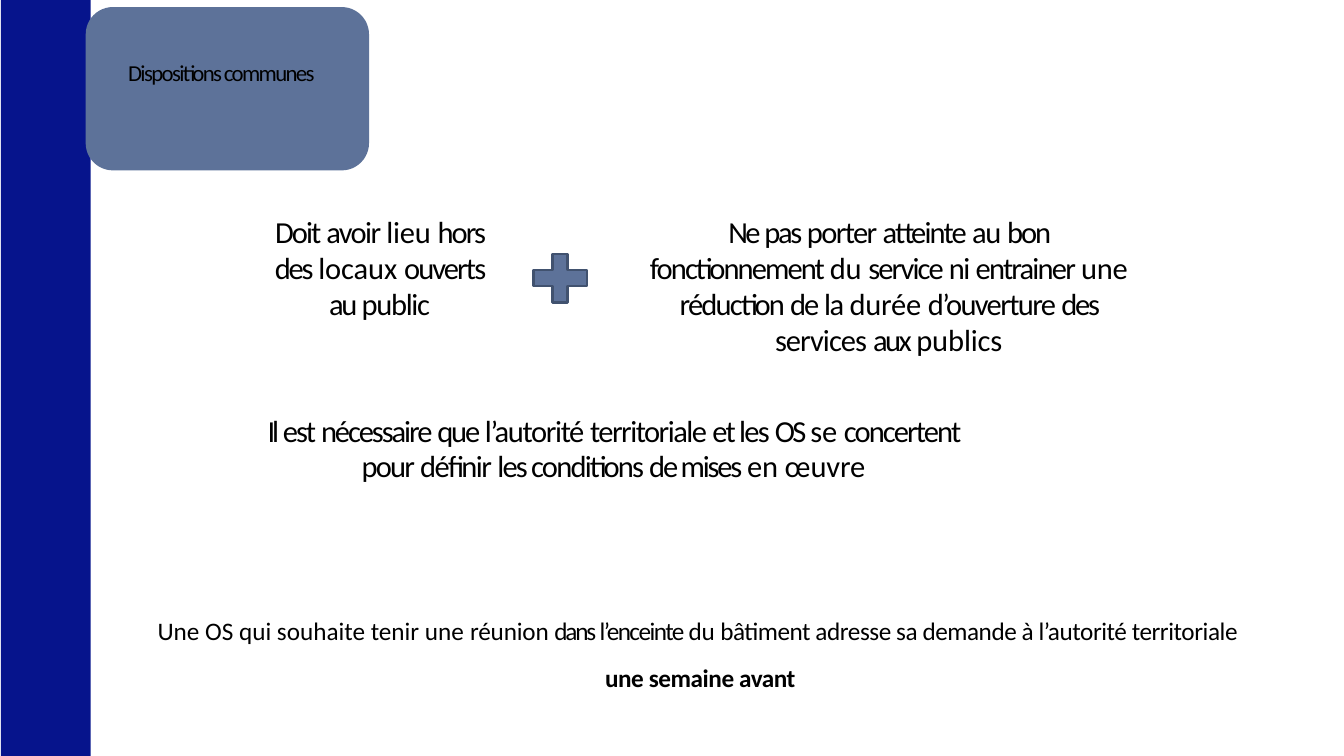
"""Slide « Dispositions communes »: rules for holding union meetings."""
from pptx import Presentation
from pptx.dml.color import RGBColor
from pptx.enum.shapes import MSO_SHAPE
from pptx.enum.text import PP_ALIGN
from pptx.util import Inches, Pt

NAVY = RGBColor(0x06, 0x14, 0x8C)
SLATE = RGBColor(0x5D, 0x72, 0x99)
DARK_SLATE = RGBColor(0x41, 0x52, 0x6F)
BLACK = RGBColor(0, 0, 0)

prs = Presentation()
prs.slide_width, prs.slide_height = Inches(13.33), Inches(7.5)
slide = prs.slides.add_slide(prs.slide_layouts[6])


def add_panel(preset, left, top, width, height, color):
    panel = slide.shapes.add_shape(
        preset, Inches(left), Inches(top), Inches(width), Inches(height))
    panel.shadow.inherit = False
    panel.fill.solid()
    panel.fill.fore_color.rgb = color
    panel.line.fill.background()


def add_text(left, top, width, height, size, paragraphs, line_spacing=None):
    frame = slide.shapes.add_textbox(
        Inches(left), Inches(top), Inches(width), Inches(height)).text_frame
    frame.word_wrap = True
    frame.margin_left = frame.margin_right = frame.margin_bottom = 0
    frame.margin_top = Inches(0.01)
    for index, pieces in enumerate(paragraphs):
        paragraph = frame.add_paragraph() if index else frame.paragraphs[0]
        paragraph.alignment = PP_ALIGN.CENTER
        paragraph.line_spacing = line_spacing
        paragraph.font.name = "Calibri"
        paragraph.font.size = Pt(size)
        paragraph.font.color.rgb = BLACK
        for text, spacing in pieces:
            run = paragraph.add_run()
            run.text = text
            run.font._element.set("spc", str(round(spacing * 100)))
    return frame


add_panel(MSO_SHAPE.RECTANGLE, 0.01, 0, 0.89, 7.5, NAVY)

conditions = [
    (2.6, 2.12, 2.33, 1.11, [
        ("Doit ", -1.4), ("avoir ", -1.2), ("lieu ", -0.2), ("hors ", -1.4),
        ("des ", -1.6), ("locaux ", -0.1), ("ouverts ", -1.4), ("au ", -1.8),
        ("public", -1)]),
    (2.52, 4.09, 7.13, 0.75, [
        ("Il ", -2.3), ("est ", -1.4), ("nécessaire ", -1.5), ("que ", -1.6),
        ("l’autorité ", -1), ("territoriale ", -1.1), ("et les ", -1.3),
        ("OS ", -2), ("se ", -0.2), ("concertent ", -1.4), ("pour ", -1.3),
        ("définir ", -1.1), ("les conditions ", -1.3), ("de mises ", -1.6),
        ("en ", -0.2), ("œuvre", -0.1)]),
    (6.36, 2.12, 4.91, 1.11, [
        ("Ne ", -2.1), ("pas ", -1.7), ("porter ", -1.2), ("atteinte ", -1.3),
        ("au ", -0.9), ("bon ", -1.5), ("fonctionnement ", -1.4), ("du ", -0.2),
        ("service ", -1.4), ("ni ", -1.1), ("entrainer ", -1.3), ("une ", -0.2),
        ("réduction ", -1.3), ("de ", -1.5), ("la ", -1.1), ("durée ", -0.2),
        ("d’ouverture ", -1.2), ("des ", -1.6), ("services ", -0.7),
        ("aux ", -1.8), ("publics", -0.1)]),
]
for left, top, width, height, pieces in conditions:
    add_text(left, top, width, height, 21.8, [pieces], 0.98)

plus_corners = [
    (5.82, 2.68), (5.63, 2.68), (5.63, 2.52), (5.48, 2.52),
    (5.48, 2.68), (5.29, 2.68), (5.29, 2.84), (5.48, 2.84),
    (5.48, 3), (5.63, 3), (5.63, 2.84), (5.82, 2.84)]
outline = [(Inches(x), Inches(y)) for x, y in plus_corners]
builder = slide.shapes.build_freeform(*outline[0])
builder.add_line_segments(outline[1:], close=True)
plus = builder.convert_to_shape()
plus.shadow.inherit = False
plus.fill.solid()
plus.fill.fore_color.rgb = SLATE
plus.line.color.rgb = DARK_SLATE
plus.line.width = Pt(1.75)

add_panel(MSO_SHAPE.ROUNDED_RECTANGLE, 0.85, 0.07, 2.81, 1.62, SLATE)
heading = add_text(0.85, 0.57, 2.45, 0.87, 16.3, [[("Dispositions communes", -1.2)]])
heading.margin_left = Inches(0.24)

request = add_text(1.07, 6.05, 11.75, 0.88, 18, [
    [("Une OS qui souhaite tenir une ", 0), ("réunion ", -0.1), ("dans ", -1.6),
     ("l’enceinte ", -1.1), ("du ", -0.2),
     ("bâtiment adresse sa demande à l’autorité territoriale ", -0.3)],
    [("une semaine avant", -0.3)],
])
request.margin_top = Inches(0.05)
deadline = request.paragraphs[1]
deadline.space_before = Pt(12.4)
deadline.font.bold = True

prs.save("out.pptx")
